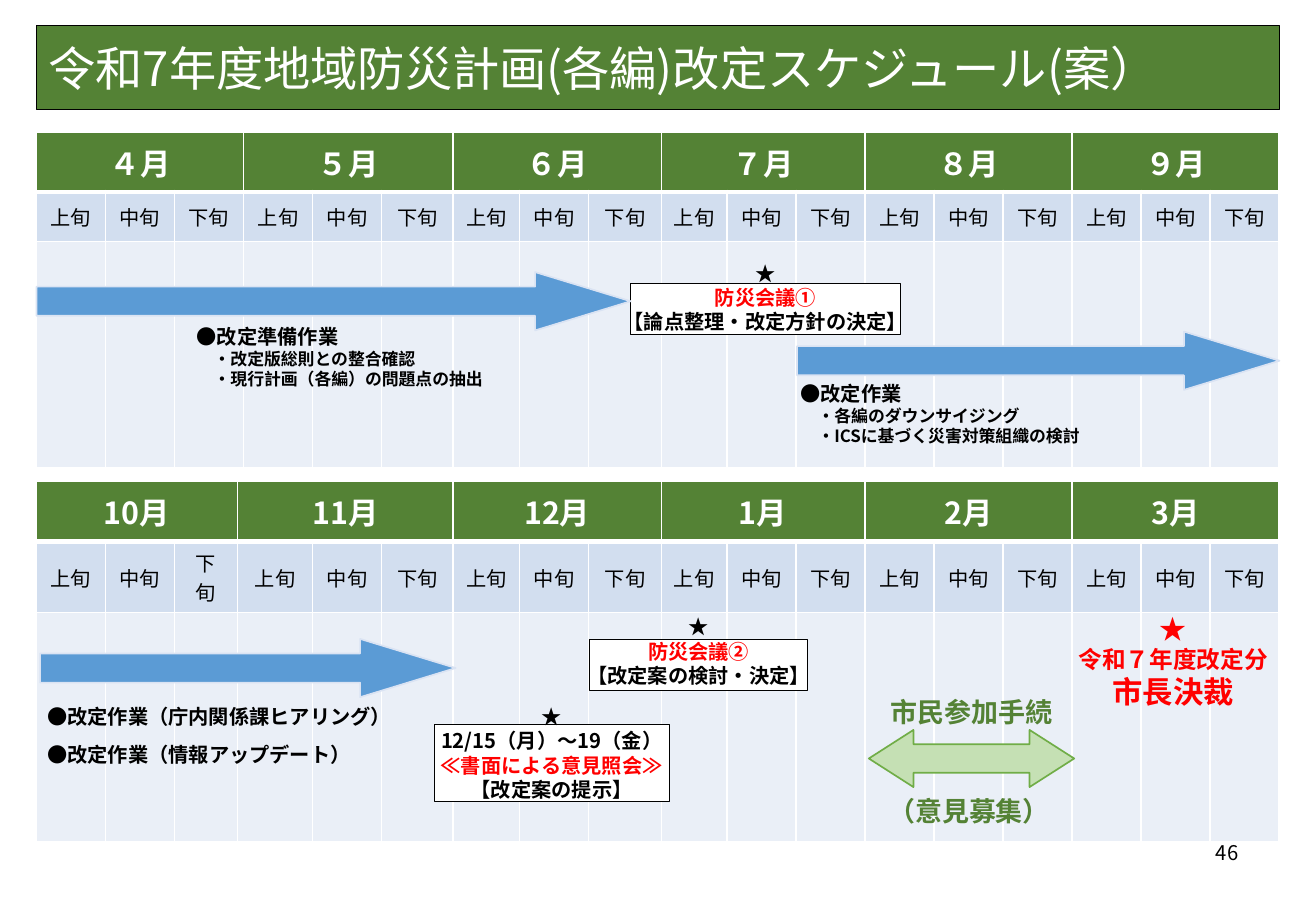
from lxml.etree import SubElement
from pptx import Presentation
from pptx.dml.color import RGBColor
from pptx.enum.shapes import MSO_SHAPE as Preset
from pptx.enum.text import MSO_ANCHOR as Anchor, MSO_AUTO_SIZE as AutoSize, PP_ALIGN as Align
from pptx.oxml.ns import qn
from pptx.util import Inches, Pt

GREEN, BLUE, RED = "548235", "5B9BD5", "FF0000"
BLACK, WHITE = "000000", "FFFFFF"
PERIOD_FILL, BODY_FILL = "D2DEEF", "EAEFF7"
FONT = "Noto Sans CJK JP"
TABLE_LEFT, TABLE_WIDTH = 0.3, 10.23


def color(code):
    return RGBColor.from_string(code)


class ScheduleSlide:
    """Holds the font and the current slide, and draws each kind of element."""

    def __init__(self, slide, font_name):
        self.slide = slide
        self.font_name = font_name

    def fill_paragraph(self, paragraph, text, size, tint=BLACK, bold=True,
                       align=Align.LEFT, indent=0):
        paragraph.text = text
        paragraph.alignment = align
        font = paragraph.font
        font.size, font.bold, font.name = Pt(size), bold, self.font_name
        font.color.rgb = color(tint)
        properties = paragraph._p.get_or_add_pPr()
        SubElement(properties.find(qn("a:defRPr")), qn("a:ea"), typeface=self.font_name)
        if indent:
            properties.set("marL", str(Inches(indent)))

    def paint(self, shape, fill, line, width):
        shape.fill.solid()
        shape.fill.fore_color.rgb = color(fill)
        shape.line.color.rgb = color(line)
        shape.line.width = Pt(width)

    def title(self, text, left, top, width, height):
        shape = self.slide.shapes.title
        shape.left, shape.top = Inches(left), Inches(top)
        shape.width, shape.height = Inches(width), Inches(height)
        self.paint(shape, GREEN, BLACK, 0.75)
        frame = shape.text_frame
        frame.auto_size = AutoSize.NONE
        frame.vertical_anchor = Anchor.MIDDLE
        self.fill_paragraph(frame.paragraphs[0], text, 28, WHITE, bold=False)

    def shape(self, preset, left, top, width, height, fill, line, line_width, adjustments=()):
        shape = self.slide.shapes.add_shape(
            preset, Inches(left), Inches(top), Inches(width), Inches(height))
        shape.shadow.inherit = False
        for index, value in enumerate(adjustments):
            shape.adjustments[index] = value
        self.paint(shape, fill, line, line_width)

    def box(self, left, top, width, height):
        self.shape(Preset.RECTANGLE, left, top, width, height, WHITE, BLACK, 0.25)

    def work_arrow(self, left, top, width):
        self.shape(Preset.RIGHT_ARROW, left, top, width, 0.48, BLUE, "DAE3F3", 1, (0.5, 1.638))

    def text(self, left, top, width, height, lines, align=Align.LEFT, bold=True,
             anchor=Anchor.TOP):
        """Each line is (text, size, colour) with an optional indent."""
        frame = self.slide.shapes.add_textbox(
            Inches(left), Inches(top), Inches(width), Inches(height)).text_frame
        frame.word_wrap = True
        frame.vertical_anchor = anchor
        for index, (text, size, tint, *indent) in enumerate(lines):
            paragraph = frame.add_paragraph() if index else frame.paragraphs[0]
            self.fill_paragraph(paragraph, text, size, tint, bold, align, *indent)

    def work_note(self, left, top, heading, details):
        lines = [(heading, 12, BLACK)] + [(detail, 10, BLACK, 0.14) for detail in details]
        self.text(left, top, 3.1, 0.64, lines)

    def cell(self, cell, fill, top_border, bottom_border):
        properties = cell._tc.get_or_add_tcPr()
        borders = {"a:lnL": 1, "a:lnR": 1, "a:lnT": top_border, "a:lnB": bottom_border}
        for tag, width in borders.items():
            line = SubElement(properties, qn(tag), w=str(Pt(width)))
            SubElement(SubElement(line, qn("a:solidFill")), qn("a:srgbClr"), val=WHITE)
        cell.fill.solid()
        cell.fill.fore_color.rgb = color(fill)
        cell.vertical_anchor = Anchor.MIDDLE

    def half_year(self, top, months, column_widths, row_heights):
        table = self.slide.shapes.add_table(
            3, len(column_widths), Inches(TABLE_LEFT), Inches(top),
            Inches(TABLE_WIDTH), Inches(sum(row_heights))).table
        scale = TABLE_WIDTH / sum(column_widths)
        for column, width in zip(table.columns, column_widths):
            column.width = Inches(width * scale)
        row_styles = [(GREEN, 1, 3), (PERIOD_FILL, 3, 1), (BODY_FILL, 1, 1)]
        for row, height, style in zip(table.rows, row_heights, row_styles):
            row.height = Inches(height)
            for cell in row.cells:
                self.cell(cell, *style)
        for index, month in enumerate(months):
            first = 3 * index
            heading = table.cell(0, first)
            heading.merge(table.cell(0, first + 2))
            self.fill_paragraph(heading.text_frame.paragraphs[0], month, 18, WHITE,
                                align=Align.CENTER)
            for offset, period in enumerate(("上旬", "中旬", "下旬")):
                paragraph = table.cell(1, first + offset).text_frame.paragraphs[0]
                self.fill_paragraph(paragraph, period, 12, bold=False, align=Align.CENTER)


def main():
    presentation = Presentation()
    presentation.slide_width, presentation.slide_height = Inches(10.83), Inches(7.5)
    schedule = ScheduleSlide(
        presentation.slides.add_slide(presentation.slide_layouts[5]), FONT)

    # Title and the two half-year tables
    schedule.title("令和7年度地域防災計画(各編)改定スケジュール(案）", TABLE_LEFT, 0.21, TABLE_WIDTH, 0.69)
    late_columns = [0.57, 0.59, 0.55, 0.57, 0.6, 0.54] + [0.57] * 8
    schedule.half_year(3.96, ["10月", "11月", "12月", "1月", "2月", "3月"],
                       [0.57, 0.57, 0.52, 0.62] + late_columns, [0.5, 0.51, 1.89])
    schedule.half_year(1.09, ["４月", "５月", "６月", "７月", "８月", "９月"],
                       [0.57] * 4 + late_columns, [0.49, 0.41, 1.86])

    # Meetings and the written inquiry
    star = ("★", 12, BLACK)
    schedule.box(3.57, 5.96, 1.94, 0.64)
    schedule.text(3.38, 5.75, 2.32, 0.91, [
        star, ("12/15（月）～19（金）", 12, BLACK), ("≪書面による意見照会≫", 12, RED),
        ("【改定案の提示】", 12, BLACK)], Align.CENTER)
    schedule.box(5.19, 2.33, 2.22, 0.42)
    schedule.text(4.83, 2.1, 2.94, 0.71, [
        star, ("防災会議①", 12, RED), ("【論点整理・改定方針の決定】", 12, BLACK)], Align.CENTER)
    schedule.box(4.85, 5.26, 1.79, 0.42)
    schedule.text(4.55, 5.01, 2.4, 0.71, [
        star, ("防災会議②", 12, RED), ("【改定案の検討・決定】", 12, BLACK)], Align.CENTER)

    # Work periods
    for left, top, width in [(0.3, 2.24, 4.89), (6.56, 2.73, 3.97), (0.33, 5.26, 3.42)]:
        schedule.work_arrow(left, top, width)
    schedule.work_note(1.52, 2.62, "●改定準備作業",
                       ["・改定版総則との整合確認", "・現行計画（各編）の問題点の抽出"])
    schedule.work_note(6.49, 3.09, "●改定作業",
                       ["・各編のダウンサイジング", "・ICSに基づく災害対策組織の検討"])
    schedule.text(0.29, 5.75, 3.1, 0.3, [("●改定作業（庁内関係課ヒアリング）", 12, BLACK)])
    schedule.text(0.29, 6.06, 2.91, 0.3, [("●改定作業（情報アップデート）", 12, BLACK)])

    # Public participation and the mayor's approval
    schedule.text(6.89, 5.68, 2.21, 0.37, [("市民参加手続", 16, GREEN)], Align.CENTER)
    schedule.shape(Preset.LEFT_RIGHT_ARROW, 7.15, 6.01, 1.69, 0.47,
                   "C5E0B4", "70AD47", 1, (0.5, 0.781))
    schedule.text(6.87, 6.49, 2.21, 0.37, [("（意見募集）", 16, GREEN)], Align.CENTER)
    schedule.text(8.62, 4.99, 2.07, 0.91, [
        ("★", 16, RED), ("令和７年度改定分", 14, RED), ("市長決裁", 18, RED)], Align.CENTER)

    # Page number
    schedule.text(8.02, 6.82, 2.27, 0.4, [("46", 12, BLACK)], Align.RIGHT, False, Anchor.MIDDLE)

    presentation.save("out.pptx")


if __name__ == "__main__":
    main()
